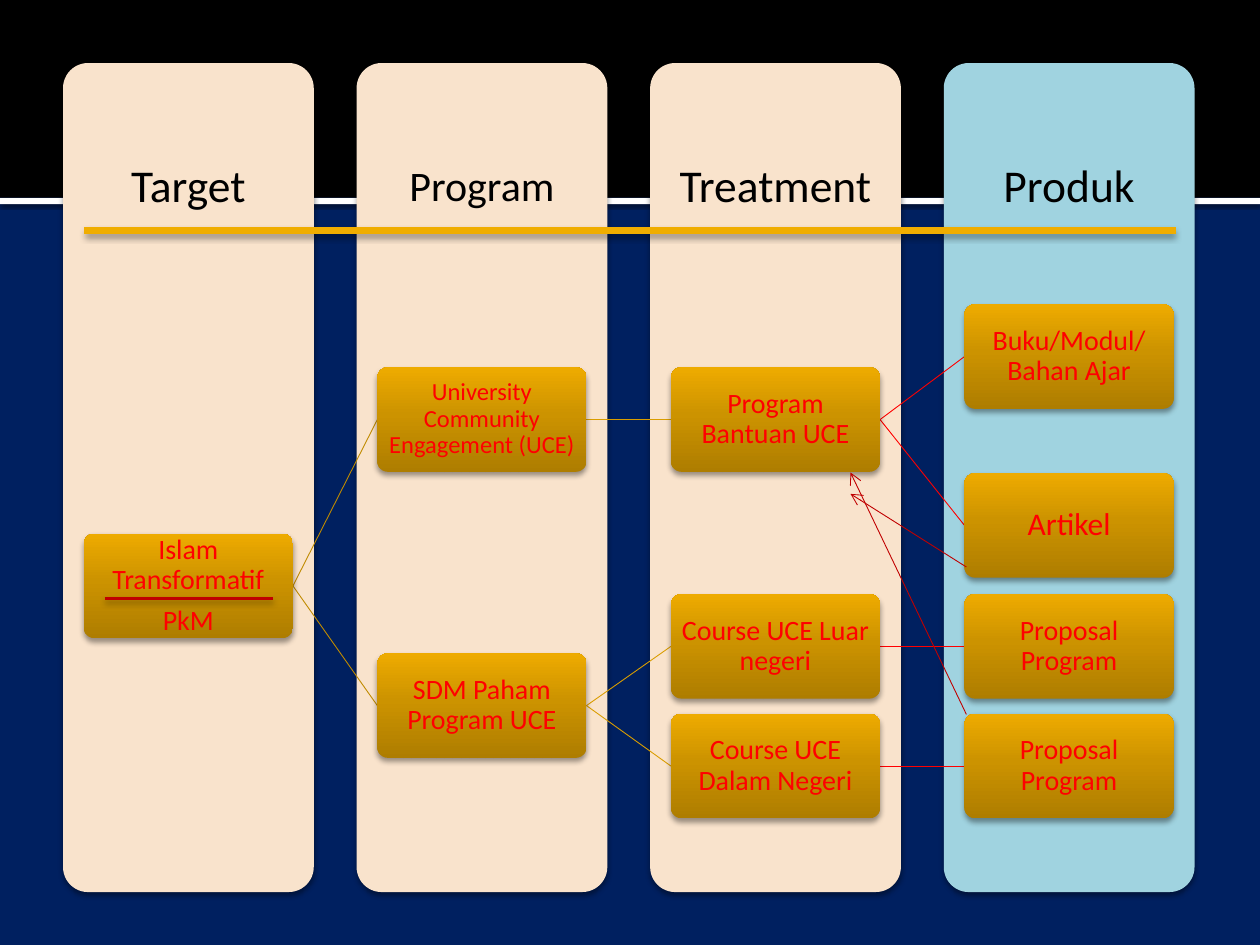
from copy import deepcopy

from lxml.etree import SubElement
from pptx import Presentation
from pptx.dml.color import RGBColor
from pptx.enum.shapes import MSO_CONNECTOR as Link, MSO_SHAPE as Shape
from pptx.enum.text import MSO_ANCHOR as Anchor, PP_ALIGN as Align
from pptx.oxml.ns import qn
from pptx.util import Inches, Pt

HEX = {"navy": "002060", "black": "000000", "white": "FFFFFF", "peach": "F9E3CC",
       "aqua": "A0D3E0", "red": "FF0000", "dark": "C00000", "gold": "F0AD00",
       "amber": "DA9D00", "ochre": "C08B00"}
GRADE = [(0, "AE7D00"), (0.55, "CC9300"), (1, "EEAB00")]

# heading, size, panel colour
COLS = [("Target", 26, "peach"), ("Program", 24, "peach"),
        ("Treatment", 26, "peach"), ("Produk", 26, "aqua")]
# key: column, middle height, size, paragraphs
BOXES = {
    "target": (0, 4.65, 16, ["Islam Transformatif", "PkM"]),
    "uce": (1, 3.33, 14, ["University Community Engagement (UCE)"]),
    "sdm": (1, 5.6, 16, ["SDM Paham Program UCE"]),
    "grant": (2, 3.33, 16, ["Program Bantuan UCE"]),
    "abroad": (2, 5.13, 16, ["Course UCE Luar negeri"]),
    "home": (2, 6.08, 16, ["Course UCE Dalam Negeri"]),
    "book": (3, 2.83, 16, ["Buku/Modul/Bahan Ajar"]),
    "paper": (3, 4.17, 18, ["Artikel"]),
    "plan1": (3, 5.13, 16, ["Proposal Program"]),
    "plan2": (3, 6.08, 16, ["Proposal Program"]),
}
TREE = [("target", "uce"), ("target", "sdm"), ("uce", "grant"), ("sdm", "abroad"),
        ("sdm", "home"), ("grant", "book"), ("grant", "paper"),
        ("abroad", "plan1"), ("home", "plan2")]
TREE_HUES = ["ochre", "amber", "red"]  # by column of the parent
RULES = [((0.67, 1.83), (9.33, 1.83), "gold", 3.78),
         ((0.83, 4.75), (2.17, 4.75), "dark", 1.5)]
ARROWS = [((7.67, 4.5), (6.75, 3.92)), ((7.67, 5.67), (6.75, 3.75))]

LEFT, TOP, STEP = 0.5, 0.5, 2.33
COL_W, COL_H, HEAD_H = 1.99, 6.58, 1.98
BOX_W, BOX_H = 1.66, 0.83
BAND = 1.57

deck = Presentation()
deck.slide_width, deck.slide_height = Inches(10), Inches(7.5)
slide = deck.slides.add_slide(deck.slide_layouts[6])
shapes = slide.shapes


def rgb(name):
    return RGBColor.from_string(HEX[name])


def shade(effects, blur=3.1, dist=2, alpha=38):
    """Put a downward black shadow in an effect list."""
    drop = SubElement(effects, qn("a:outerShdw"), blurRad=str(Pt(blur)),
                      dist=str(Pt(dist)), dir="5400000", rotWithShape="0")
    tone = SubElement(drop, qn("a:srgbClr"), val=HEX["black"])
    SubElement(tone, qn("a:alpha"), val=str(alpha * 1000))


def block(kind, x, y, w, h, hue=None):
    """Add a shape without outline; no hue gives the gold gradient."""
    item = shapes.add_shape(kind, *map(Inches, (x, y, w, h)))
    item.line.fill.background()
    item.shadow.inherit = False
    if kind == Shape.ROUNDED_RECTANGLE:
        item.adjustments[0] = 0.1
        shade(item._element.spPr.find(qn("a:effectLst")))
    if hue:
        item.fill.solid()
        item.fill.fore_color.rgb = rgb(hue)
        return item
    item.fill.gradient()
    item.fill.gradient_angle = 90
    stops = item._element.spPr.find(qn("a:gradFill")).find(qn("a:gsLst"))
    stops.append(deepcopy(stops[0]))
    for stop, (place, tone) in zip(item.fill.gradient_stops, GRADE):
        stop.position = place
        stop.color.rgb = RGBColor.from_string(tone)
    return item


def write(item, lines, size, hue, inset):
    frame = item.text_frame
    frame.word_wrap = True
    frame.vertical_anchor = Anchor.MIDDLE
    frame.margin_left = frame.margin_right = Inches(inset)
    frame.margin_top = frame.margin_bottom = Inches(inset)
    frame.text = "\n".join(lines)
    for para in frame.paragraphs:
        para.alignment = Align.CENTER
        para.line_spacing = 0.9
        para.space_after = Pt(0.35 * size)
        font = para.runs[0].font
        font.name, font.size, font.color.rgb = "Calibri", Pt(size), rgb(hue)


def join(start, end, hue, width=0.5, arrow=False, shadow=False):
    wire = shapes.add_connector(Link.STRAIGHT, *map(Inches, (*start, *end)))
    wire.line.color.rgb = rgb(hue)
    wire.line.width = Pt(width)
    props = wire._element.spPr
    if arrow:
        SubElement(props.find(qn("a:ln")), qn("a:tailEnd"), type="arrow")
    effects = SubElement(props, qn("a:effectLst"))
    if shadow:
        shade(effects, 3.5)


def box_x(col):
    return LEFT + col * STEP + (COL_W - BOX_W) / 2


slide.background.fill.solid()
slide.background.fill.fore_color.rgb = rgb("navy")
stripe = block(Shape.RECTANGLE, 0, BAND, 10, 0.05, "white")
shade(stripe._element.spPr.find(qn("a:effectLst")), 2.5, 0.8, 60)
block(Shape.RECTANGLE, 0, 0, 10, BAND, "black")

for i, (name, size, hue) in enumerate(COLS):
    x = LEFT + i * STEP
    block(Shape.ROUNDED_RECTANGLE, x, TOP, COL_W, COL_H, hue)
    head = shapes.add_textbox(*map(Inches, (x, TOP, COL_W, HEAD_H)))
    write(head, [name], size, "black", 0.2)

for a, b in TREE:
    (col, y, *_), (goal, end, *_) = BOXES[a], BOXES[b]
    join((box_x(col) + BOX_W, y), (box_x(goal), end), TREE_HUES[col])

for col, y, size, lines in BOXES.values():
    box = block(Shape.ROUNDED_RECTANGLE, box_x(col), y - BOX_H / 2, BOX_W, BOX_H)
    write(box, lines, size, "red", 0.03)

for start, end, hue, width in RULES:
    join(start, end, hue, width, shadow=True)
for start, end in ARROWS:
    join(start, end, "dark", arrow=True)

deck.save("out.pptx")
